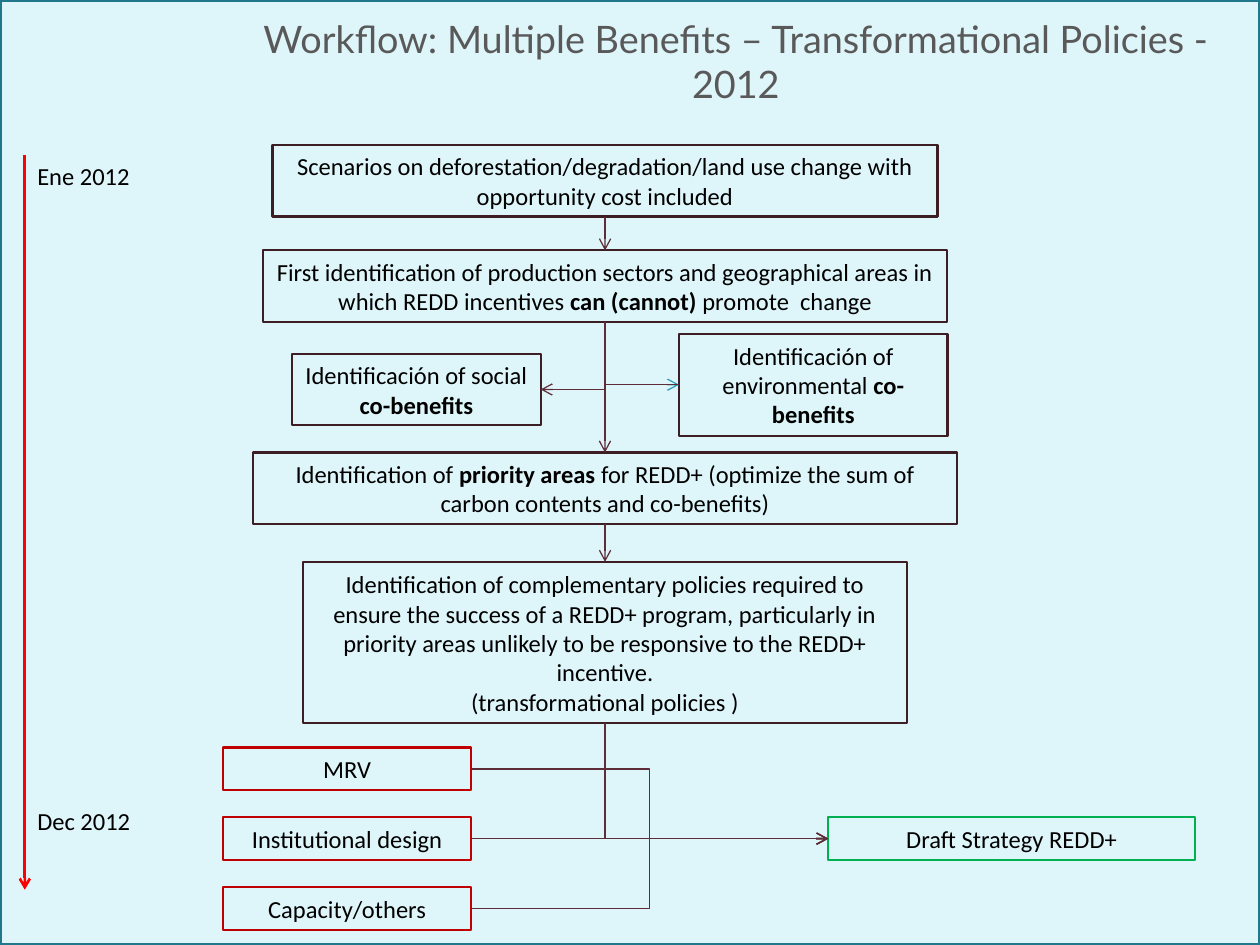
from lxml import etree
from pptx import Presentation
from pptx.dml.color import RGBColor
from pptx.enum.shapes import MSO_CONNECTOR, MSO_SHAPE
from pptx.enum.text import MSO_ANCHOR, MSO_AUTO_SIZE, PP_ALIGN
from pptx.oxml.ns import qn
from pptx.util import Pt

RECTANGLE = MSO_SHAPE.RECTANGLE
STRAIGHT, ELBOW = MSO_CONNECTOR.STRAIGHT, MSO_CONNECTOR.ELBOW
MIDDLE = MSO_ANCHOR.MIDDLE
FIT_SHAPE, NO_FIT = MSO_AUTO_SIZE.SHAPE_TO_FIT_TEXT, MSO_AUTO_SIZE.NONE
CENTER, LEFT_ALIGNED = PP_ALIGN.CENTER, PP_ALIGN.LEFT
TOP, LEFT, BOTTOM, RIGHT = range(4)

COLORS = {
    "background": "E5F5FA",
    "panel": "DEF5FA",
    "panel_edge": "21788D",
    "title": "595959",
    "text": "000000",
    "step": "3E1E25",
    "input": "C00000",
    "draft": "00B050",
    "link": "5E2D37",
    "environment_link": "28A1BE",
    "timeline": "FF0000",
}


def color(name):
    """Return the named colour."""
    return RGBColor.from_string(COLORS[name])


def write(frame, paragraphs, align):
    """Fill a text frame with paragraphs given as lists of (text, bold) runs."""
    for index, runs in enumerate(paragraphs):
        paragraph = frame.paragraphs[0] if index == 0 else frame.add_paragraph()
        paragraph.alignment = align
        paragraph.font.size = Pt(14)
        paragraph.font.name = "Calibri"
        paragraph.font.color.rgb = color("text")
        for text, bold in runs:
            run = paragraph.add_run()
            run.text = text
            if bold:
                run.font.bold = True


def add_box(slide, box, edge, *paragraphs):
    """Add an outlined box with centred text."""
    step = slide.shapes.add_shape(RECTANGLE, *map(Pt, box))
    step.shadow.inherit = False
    step.fill.background()
    step.line.color.rgb = color(edge)
    step.line.width = Pt(1.25)
    step.text_frame.word_wrap = True
    step.text_frame.auto_size = FIT_SHAPE
    step.text_frame.vertical_anchor = MIDDLE
    write(step.text_frame, paragraphs, CENTER)
    return step


def add_arrow(slide, kind, points=(0, 0, 0, 0), edge="link", width=0.75, end="tailEnd"):
    """Add a connector with an open arrowhead at the given end."""
    arrow = slide.shapes.add_connector(kind, *map(Pt, points))
    arrow.line.color.rgb = color(edge)
    arrow.line.width = Pt(width)
    etree.SubElement(arrow.line._get_or_add_ln(), qn("a:" + end), type="arrow")
    etree.SubElement(arrow._element.spPr, qn("a:effectLst"))
    return arrow


def link(slide, kind, start, start_side, finish, finish_side, **style):
    """Join the sides of two boxes with an arrow."""
    arrow = add_arrow(slide, kind, **style)
    arrow.begin_connect(start, start_side)
    arrow.end_connect(finish, finish_side)
    return arrow


def link_corner(slide, side_box, side, trunk_box, trunk_side, **style):
    """Join a side box to the trunk with a single right-angle turn."""
    arrow = link(slide, ELBOW, side_box, side, trunk_box, trunk_side, **style)
    arrow._element.spPr.find(qn("a:prstGeom")).set("prst", "bentConnector2")


def draw_panel(slide, box):
    """Draw the tinted panel behind everything else."""
    panel = slide.shapes.add_shape(RECTANGLE, *map(Pt, box))
    panel.shadow.inherit = False
    panel.fill.solid()
    panel.fill.fore_color.rgb = color("panel")
    panel.line.color.rgb = color("panel_edge")
    panel.line.width = Pt(2)
    slide.shapes._spTree.insert(2, panel._element)


def draw_title(slide, box):
    """Place and format the title placeholder."""
    title = slide.shapes.title
    title.left, title.top, title.width, title.height = map(Pt, box)
    frame = title.text_frame
    frame.text = "Workflow: Multiple Benefits – Transformational Policies - 2012"
    frame.word_wrap = True
    frame.auto_size = NO_FIT
    frame.vertical_anchor = MIDDLE
    heading = frame.paragraphs[0]
    heading.alignment = CENTER
    heading.font.size = Pt(21.6)
    heading.font.name = "Lato"
    heading.font.color.rgb = color("title")


def draw_timeline(slide, box):
    """Draw the time arrow with its start and end dates."""
    left, top, width, height = box
    add_arrow(slide, STRAIGHT, (left, top, left, top + height), "timeline", 1.5)
    for date, offset in (("Ene 2012", 0), ("Dec 2012", 368.6)):
        label = slide.shapes.add_textbox(*map(Pt, (left, top + offset, width, 24.5)))
        label.text_frame.word_wrap = False
        label.text_frame.auto_size = FIT_SHAPE
        write(label.text_frame, [[(date, False)]], LEFT_ALIGNED)


def draw_steps(slide, box):
    """Draw the central chain of steps and return the last one."""
    left, top, width, height = box
    center = left + width / 2

    def main_step(offset, step_width, step_height, *paragraphs):
        """Add a step centred on the chain."""
        place = (center - step_width / 2, top + offset, step_width, step_height)
        return add_box(slide, place, "step", *paragraphs)

    scenarios = main_step(0, 380, 41, [
        ("Scenarios on deforestation/degradation/land use change with "
         "opportunity cost included", False)])
    sectors = main_step(60.3, 391, 41, [
        ("First identification of production sectors and geographical areas in "
         "which REDD incentives ", False),
        ("can (cannot) ", True), ("promote  change", False)])
    priority = main_step(175.8, width, 41, [
        ("Identification of ", False), ("priority areas ", True),
        ("for REDD+ (optimize the sum of carbon contents and co-benefits)", False)])
    policies = main_step(238.3, 345.6, height - 238.3, [
        ("Identification of complementary policies required to ensure the success "
         "of a REDD+ program, particularly in priority areas unlikely to be "
         "responsive to the REDD+ incentive.", False)],
        [("(transformational policies )", False)])
    social = add_box(slide, (left + 22.5, top + 119.3, 142, 41), "step", [
        ("Identificación of social ", False), ("co-benefits", True)])
    environment = add_box(slide, (left + 243.6, top + 107.9, 153.4, 58.3), "step", [
        ("Identificación of environmental ", False), ("co-benefits", True)])

    link(slide, STRAIGHT, scenarios, BOTTOM, sectors, TOP)
    link_corner(slide, environment, LEFT, sectors, BOTTOM,
                edge="environment_link", end="headEnd")
    link_corner(slide, social, RIGHT, sectors, BOTTOM, end="headEnd")
    link_corner(slide, environment, LEFT, priority, TOP)
    link(slide, STRAIGHT, priority, BOTTOM, policies, TOP)
    return policies


def draw_strategy(slide, box, policies):
    """Draw the inputs that lead, with the policies, to the draft strategy."""
    left, top, width, height = box
    row_height, draft_width = 24.5, 209.5
    pitch = (height - row_height) / 2
    draft = add_box(
        slide, (left + width - draft_width, top + pitch, draft_width, row_height),
        "draft", [("Draft Strategy REDD+", False)])
    link_corner(slide, draft, LEFT, policies, BOTTOM, end="headEnd")
    for row, name in enumerate(("MRV", "Institutional design", "Capacity/others")):
        place = (left, top + row * pitch, 142, row_height)
        source = add_box(slide, place, "input", [(name, False)])
        kind = STRAIGHT if row == 1 else ELBOW
        link(slide, kind, source, RIGHT, draft, LEFT)


def main():
    """Build and save the workflow slide."""
    deck = Presentation()
    deck.slide_width, deck.slide_height = Pt(720), Pt(540)
    slide = deck.slides.add_slide(deck.slide_layouts[5])
    slide.background.fill.solid()
    slide.background.fill.fore_color.rgb = color("background")
    draw_panel(slide, (0, 0, 720, 540))
    draw_title(slide, (133.2, 10, 574.6, 49.7))
    draw_timeline(slide, (14.2, 88.6, 68, 419.8))
    policies = draw_steps(slide, (144.5, 82.8, 402.5, 330.5))
    draw_strategy(slide, (127.4, 427.2, 555.4, 104.1), policies)
    deck.save("out.pptx")


if __name__ == "__main__":
    main()
